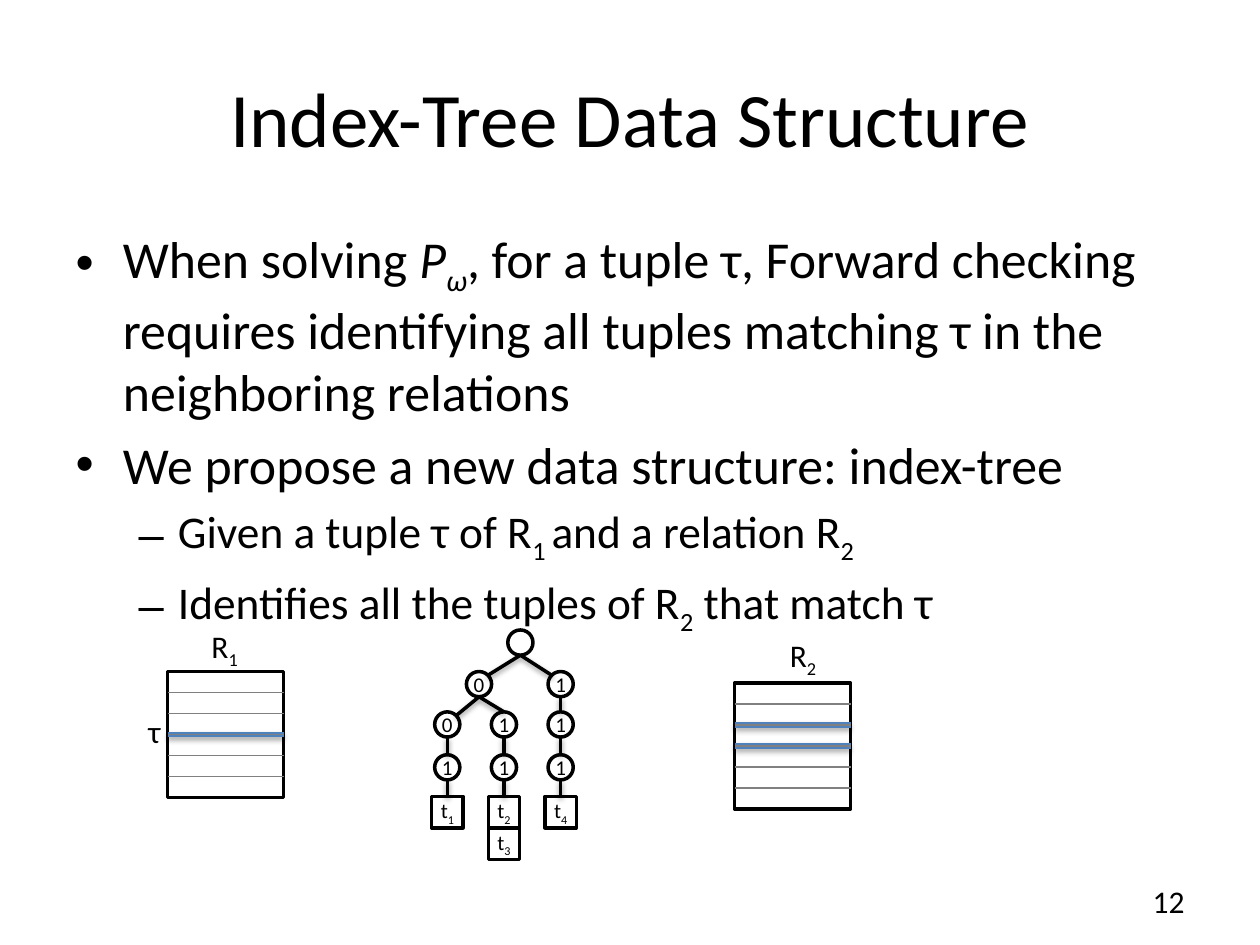
from dataclasses import dataclass
from lxml.etree import SubElement
from pptx import Presentation
from pptx.dml.color import RGBColor
from pptx.enum.shapes import MSO_CONNECTOR, MSO_SHAPE
from pptx.enum.text import MSO_ANCHOR, MSO_AUTO_SIZE, PP_ALIGN
from pptx.oxml.ns import qn
from pptx.util import Inches, Pt


@dataclass(frozen=True)
class Theme:
    font: str = "Calibri"
    ink: str = "000000"
    paper: str = "FFFFFF"
    rule: str = "808080"
    match: str = "4F81BD"
    title: float = 44
    bullet: float = 29.6
    sub_bullet: float = 25.9
    label: float = 18
    node: float = 12
    outline: float = 2
    hairline: float = 0.75
    match_line: float = 3


THEME = Theme()


@dataclass(frozen=True)
class Styled:
    text: str
    italic: bool = False
    subscript: bool = False


def sub(text, italic=False):
    return Styled(text, italic, True)


def write(paragraph, *parts, size, align=None, level=0):
    """Fill a paragraph with plain strings and Styled parts."""
    paragraph.level = level
    if align is not None:
        paragraph.alignment = align
    for part in parts:
        styled = part if isinstance(part, Styled) else Styled(part)
        run = paragraph.add_run()
        run.text = styled.text
        run.font.size = Pt(size)
        run.font.name = THEME.font
        run.font.italic = styled.italic
        run.font.color.rgb = RGBColor.from_string(THEME.ink)
        if styled.subscript:
            run.font._element.set("baseline", "-25000")


def place(shape, *box):
    shape.left, shape.top, shape.width, shape.height = map(Inches, box)


def add_label(slide, box, *parts, align=PP_ALIGN.LEFT, anchor=MSO_ANCHOR.TOP, wrap=True):
    text_box = slide.shapes.add_textbox(*map(Inches, box))
    frame = text_box.text_frame
    frame.word_wrap = wrap
    frame.vertical_anchor = anchor
    write(frame.paragraphs[0], *parts, size=THEME.label, align=align)


def add_outlined(shapes, kind, box, *parts):
    shape = shapes.add_shape(kind, *map(Inches, box))
    shape.shadow.inherit = False
    shape.fill.solid()
    shape.fill.fore_color.rgb = RGBColor.from_string(THEME.paper)
    shape.line.color.rgb = RGBColor.from_string(THEME.ink)
    shape.line.width = Pt(THEME.outline)
    if parts:
        frame = shape.text_frame
        frame.margin_left = frame.margin_right = frame.margin_top = frame.margin_bottom = 0
        frame.vertical_anchor = MSO_ANCHOR.MIDDLE
        write(frame.paragraphs[0], *parts, size=THEME.node, align=PP_ALIGN.CENTER)


def add_line(shapes, start, end, color, width, shadow=None):
    """Draw a line; shadow is (opacity in percent, distance in points)."""
    line = shapes.add_connector(MSO_CONNECTOR.STRAIGHT, *map(Inches, (*start, *end)))
    line.line.color.rgb = RGBColor.from_string(color)
    line.line.width = Pt(width)
    effects = SubElement(line._element.spPr, qn("a:effectLst"))
    if shadow:
        opacity, distance = shadow
        outer = SubElement(effects, qn("a:outerShdw"), blurRad=str(Pt(3.1)),
                           dist=str(Pt(distance)), dir="5400000", rotWithShape="0")
        tint = SubElement(outer, qn("a:srgbClr"), val=THEME.ink)
        SubElement(tint, qn("a:alpha"), val=str(opacity * 1000))


def add_title(slide, box):
    title = slide.shapes.title
    place(title, *box)
    write(title.text_frame.paragraphs[0], "Index-Tree Data Structure",
          size=THEME.title, align=PP_ALIGN.CENTER)


def add_bullets(slide, box):
    body = slide.placeholders[1]
    place(body, *box)
    frame = body.text_frame
    frame.auto_size = MSO_AUTO_SIZE.NONE
    bullets = [
        (0, "When solving ", Styled("P", italic=True), sub("ω", italic=True),
         ", for a tuple τ, Forward checking requires identifying all tuples "
         "matching τ in the neighboring relations"),
        (0, "We propose a new data structure: index-tree"),
        (1, "Given a tuple τ of R", sub("1 "), "and a relation R", sub("2")),
        (1, "Identifies all the tuples of R", sub("2"), " that match τ"),
    ]
    for index, (level, *parts) in enumerate(bullets):
        paragraph = frame.add_paragraph() if index else frame.paragraphs[0]
        size = THEME.sub_bullet if level else THEME.bullet
        write(paragraph, *parts, size=size, level=level)


def add_relation(slide, box, number, matches, label_offset, rows=6):
    """Draw a relation as ruled rows; matches are the rules that are highlighted."""
    left, top, width, height = box
    add_outlined(slide.shapes, MSO_SHAPE.RECTANGLE, box)

    def rule(row, *style, **options):
        y = top + height * row / rows
        add_line(slide.shapes, (left, y), (left + width, y), *style, **options)

    for row in matches:
        rule(row, THEME.match, THEME.match_line, shadow=(35, 1.8))
    for row in range(1, rows):
        rule(row, THEME.rule, THEME.hairline)
    across, up = label_offset
    add_label(slide, (left + across, top - up, 0.5, 0.4), "R", sub(number))


def add_index_tree(slide, left, top):
    shapes = slide.shapes.add_group_shape().shapes
    column, radius, leaf = 0.45, 0.1, 0.25
    leaf_top = 1.32
    levels = (0.1, 0.43, 0.75, 1.09)
    nodes = {  # name: (column, level, text)
        "root": (1.29, 0, ""), "0": (0.56, 1, "0"), "1": (2, 1, "1"),
        "00": (0, 2, "0"), "01": (1, 2, "1"), "11": (2, 2, "1"),
        "001": (0, 3, "1"), "011": (1, 3, "1"), "111": (2, 3, "1"),
    }
    edges = [  # parent, child, side of the child that the line meets
        ("root", "0", 1), ("root", "1", -1), ("0", "00", 1), ("0", "01", 0),
        ("1", "11", 0), ("00", "001", 0), ("01", "011", 0), ("11", "111", 0),
    ]
    leaves = [(0, 0, "1"), (1, 0, "2"), (1, 1, "3"), (2, 0, "4")]

    def center(name):
        across, level, _ = nodes[name]
        return left + across * column, top + levels[level]

    def edge(start, end):
        add_line(shapes, start, end, THEME.ink, THEME.outline, shadow=(38, 1.6))

    for name, (_, _, text) in nodes.items():
        x, y = center(name)
        box = (x - radius, y - radius, 2 * radius, 2 * radius)
        add_outlined(shapes, MSO_SHAPE.OVAL, box, *([text] if text else []))
    for across, row, number in leaves:
        box = (left + across * column - leaf / 2, top + leaf_top + row * leaf, leaf, leaf)
        add_outlined(shapes, MSO_SHAPE.RECTANGLE, box, "t", sub(number))
    for parent, child, side in edges:
        x, y = center(parent)
        child_x, child_y = center(child)
        reach = 0.7 * radius if side else radius
        edge((x, y + radius), (child_x + side * reach, child_y - reach))
    for name in ("001", "011", "111"):
        x, y = center(name)
        edge((x, y + radius), (x, top + leaf_top))


def main():
    presentation = Presentation()
    presentation.slide_width, presentation.slide_height = Inches(10), Inches(7.5)
    slide = presentation.slides.add_slide(presentation.slide_layouts[1])
    add_title(slide, (0.5, 0.3, 9, 1.25))
    add_bullets(slide, (0.5, 1.75, 9.08, 2.83))
    add_label(slide, (7.17, 6.95, 2.33, 0.4), "12",
              align=PP_ALIGN.RIGHT, anchor=MSO_ANCHOR.MIDDLE)
    add_relation(slide, (5.83, 5.42, 0.92, 1), "2", (2, 3), (0.34, 0.42))
    add_relation(slide, (1.33, 5.33, 0.92, 1), "1", (3,), (0.25, 0.4))
    add_label(slide, (1.08, 5.6, 0.3, 0.4), "τ", wrap=False)
    add_index_tree(slide, 3.55, 5)
    presentation.save("out.pptx")


if __name__ == "__main__":
    main()
